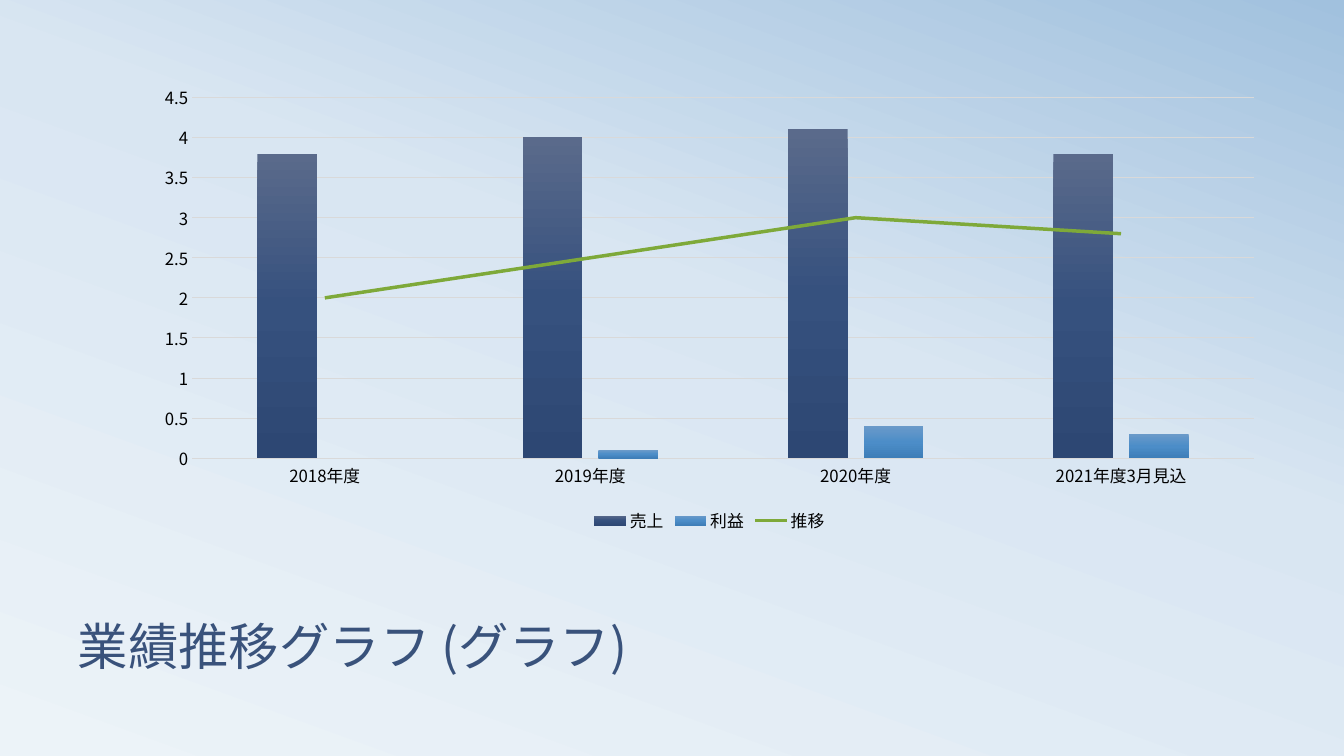
from copy import deepcopy

from lxml.etree import SubElement
from pptx import Presentation
from pptx.chart.data import CategoryChartData
from pptx.dml.color import RGBColor
from pptx.enum.chart import XL_CHART_TYPE, XL_LEGEND_POSITION, XL_MARKER_STYLE, XL_TICK_MARK
from pptx.enum.text import MSO_ANCHOR, MSO_AUTO_SIZE, PP_ALIGN
from pptx.oxml import parse_xml
from pptx.oxml.ns import nsdecls, qn
from pptx.util import Inches, Pt

FONT = "Noto Sans CJK JP"
color = RGBColor.from_string


def style_font(font, size, hex_color):
    font.size = Pt(size)
    font.bold = False
    font.color.rgb = color(hex_color)
    font.name = FONT
    SubElement(font._rPr, qn("a:ea"), typeface=FONT)


def fill_gradient(fill, owner, stops, angle):
    """Give fill, which lies inside the XML element owner, a linear gradient (clockwise angle)."""
    fill.gradient()
    fill.gradient_angle = 360 - angle
    stop_list = owner.xpath(".//a:gsLst")[0]
    while len(stop_list) < len(stops):
        stop_list.append(deepcopy(stop_list[0]))
    for stop, (position, hex_color) in zip(fill.gradient_stops, stops):
        stop.position = position
        stop.color.rgb = color(hex_color)


deck = Presentation()
deck.slide_width, deck.slide_height = Inches(13.33), Inches(7.5)
page = deck.slides.add_slide(deck.slide_layouts[5])
fill_gradient(page.background.fill, page.element,
              [(0, "ECF3F8"), (0.58, "D9E6F2"), (1, "A1C1DE")], 290)

# Title
title = page.shapes.title
title.left, title.top = Inches(0.67), Inches(5.58)
title.width, title.height = Inches(12), Inches(1.17)
frame = title.text_frame
frame.word_wrap = True
frame.auto_size = MSO_AUTO_SIZE.NONE
frame.vertical_anchor = MSO_ANCHOR.BOTTOM
para = frame.paragraphs[0]
para.alignment = PP_ALIGN.LEFT
para.line_spacing = 0.8
span = para.add_run()
span.text = "業績推移グラフ (グラフ)"
style_font(span.font, 36, "39527B")

# Chart
data = CategoryChartData()
data.categories = ["2018年度", "2019年度", "2020年度", "2021年度3月見込"]
data.add_series("売上", [3.8, 4, 4.1, 3.8])
data.add_series("利益", [0, 0.1, 0.4, 0.3])
data.add_series("推移", [2, 2.5, 3, 2.8])
chart = page.shapes.add_chart(XL_CHART_TYPE.COLUMN_CLUSTERED, Inches(1.41), Inches(0.75),
                              Inches(11.25), Inches(4.58), data).chart
chart.has_title = False
style_font(chart.font, 12, "000000")
chart.has_legend = True
chart.legend.position = XL_LEGEND_POSITION.BOTTOM
chart.legend.include_in_layout = False
style_font(chart.legend.font, 12, "000000")

for axis in (chart.category_axis, chart.value_axis):
    axis.major_tick_mark = axis.minor_tick_mark = XL_TICK_MARK.NONE
    style_font(axis.tick_labels.font, 12, "000000")
chart.value_axis.minimum_scale, chart.value_axis.maximum_scale = 0, 4.5
chart.value_axis.major_unit = 0.5
chart.value_axis.format.line.fill.background()
for line in (chart.category_axis.format.line, chart.value_axis.major_gridlines.format.line):
    line.color.rgb = color("D9D9D9")
    line.width = Pt(0.75)

columns = chart.plots[0]
columns.gap_width, columns.overlap = 219, -27
columns.vary_by_categories = False
column_colors = [("5A6A8B", "36517E", "2D4773"), ("6A9AC9", "4C8DC8", "3E7EB8")]
for series, hexes in zip(columns.series, column_colors):
    fill_gradient(series.format.fill, series._element, list(zip((0, 0.5, 1), hexes)), 90)

# Move the third series to a line plot on the same axes
bar_chart = chart._chartSpace.xpath(".//c:barChart")[0]
line_chart = parse_xml(f'<c:lineChart {nsdecls("c")}><c:grouping val="standard"/>'
                       '<c:varyColors val="0"/><c:marker val="1"/></c:lineChart>')
trend = bar_chart.findall(qn("c:ser"))[2]
for bar_setting in trend.findall(qn("c:invertIfNegative")):
    trend.remove(bar_setting)
line_chart.insert(2, trend)
for axis_id in bar_chart.findall(qn("c:axId")):
    line_chart.append(deepcopy(axis_id))
bar_chart.addnext(line_chart)

trend_series = chart.plots[1].series[0]
trend_series.smooth = False
trend_series.marker.style = XL_MARKER_STYLE.NONE
trend_series.format.line.color.rgb = color("7EA939")
trend_series.format.line.width = Pt(2.5)

deck.save("out.pptx")
